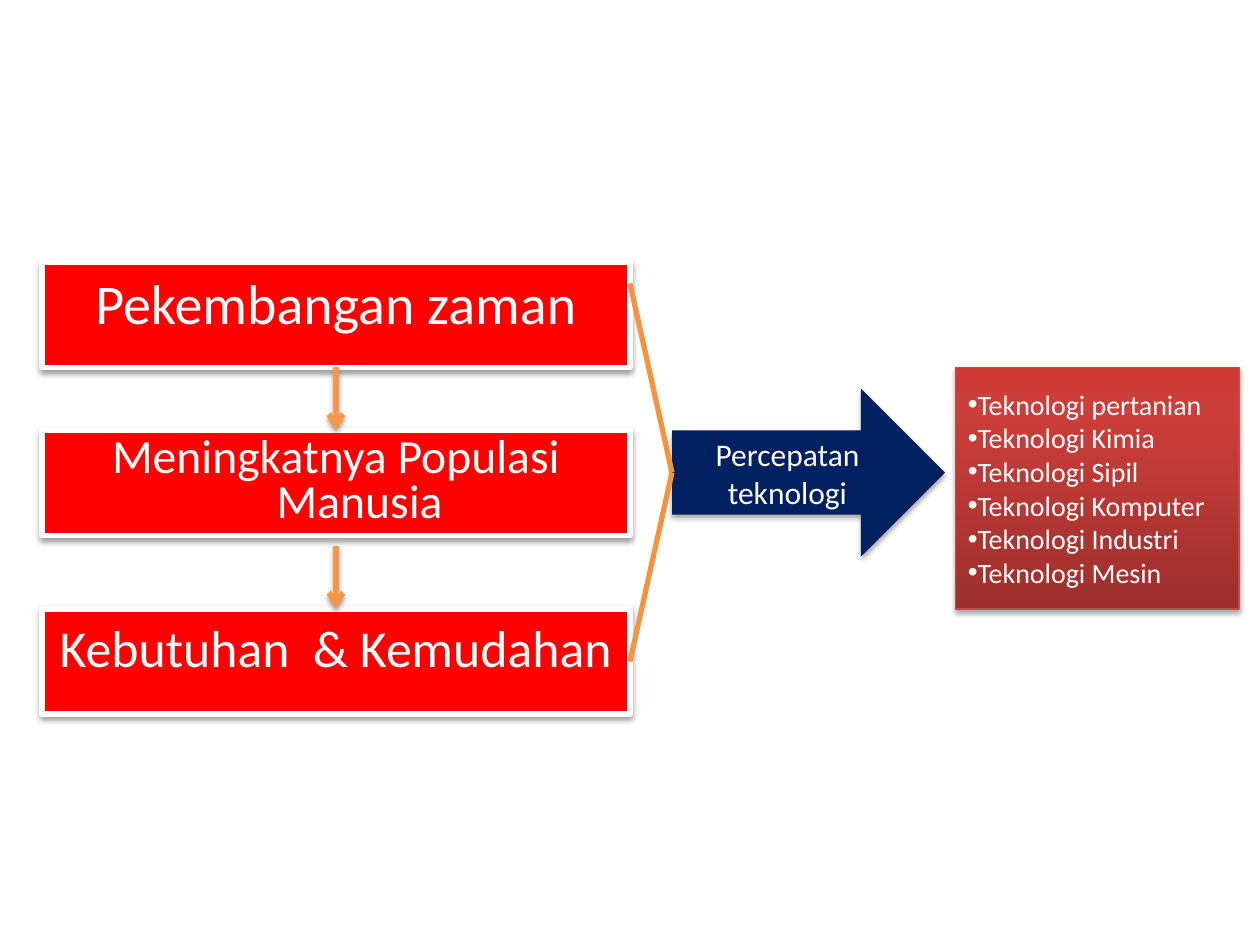
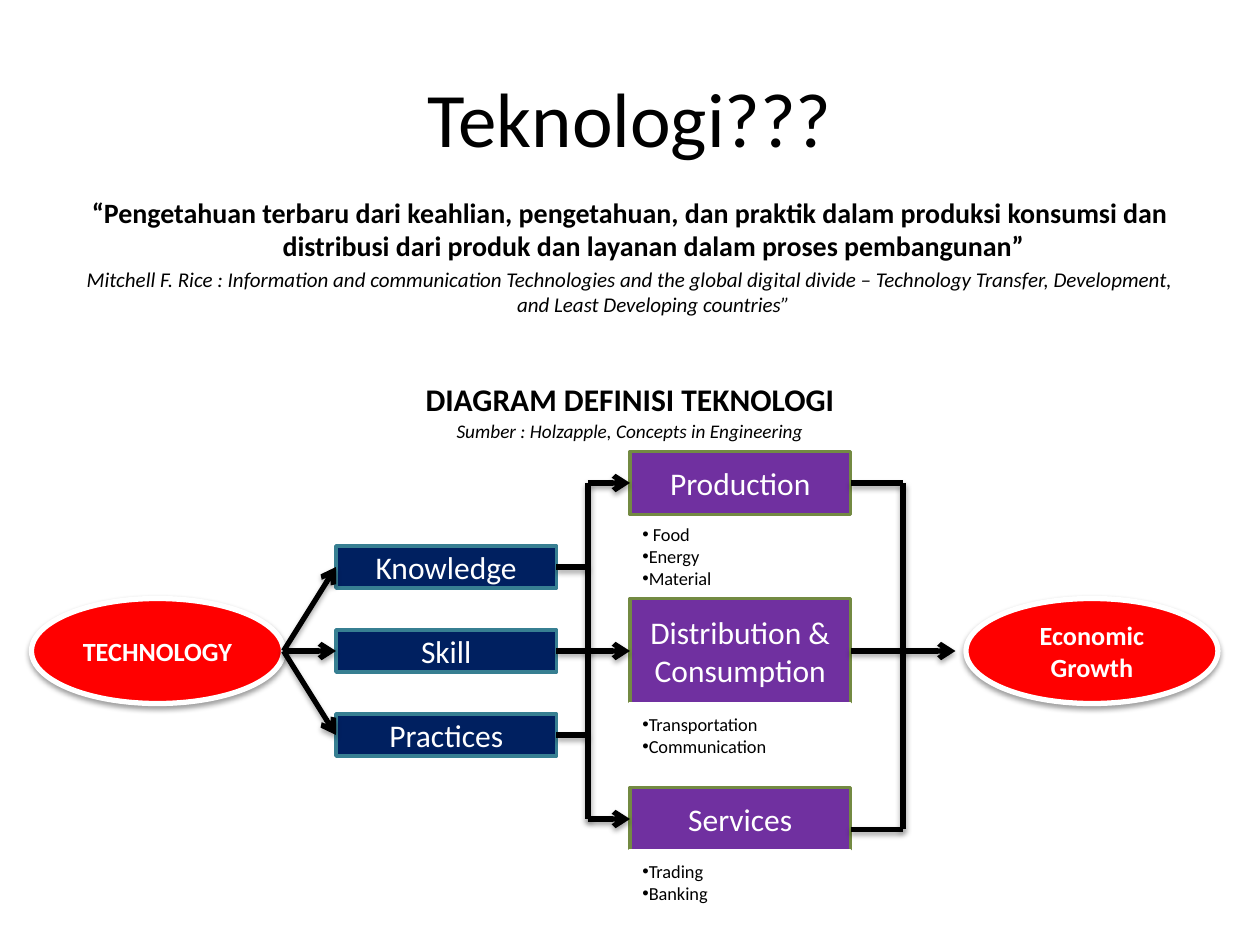
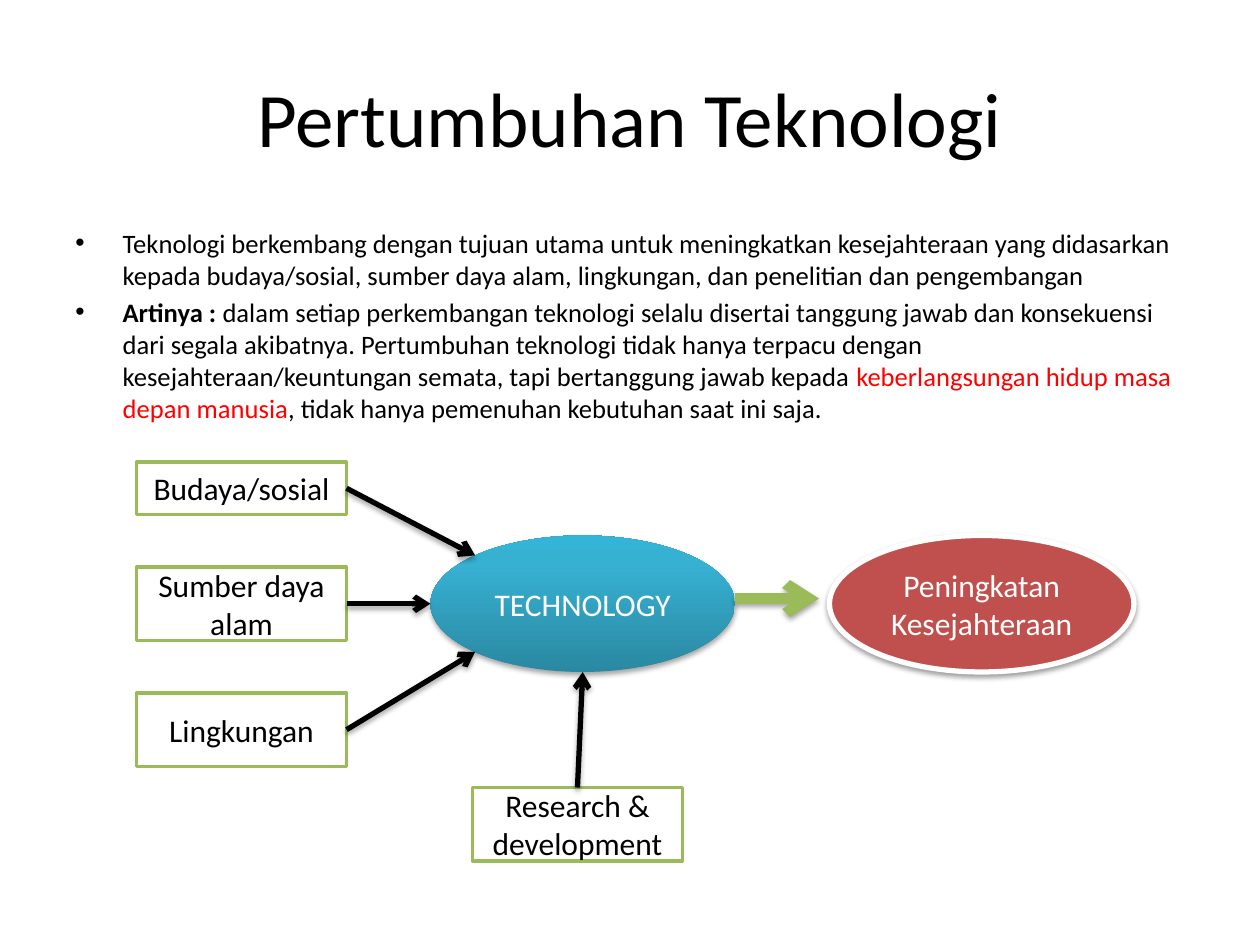
from collections import namedtuple
from copy import deepcopy
from dataclasses import dataclass
from math import sqrt

from lxml import etree
from pptx import Presentation
from pptx import util as u
from pptx.dml.color import RGBColor
from pptx.enum import shapes, text
from pptx.oxml.ns import qn

SHAPE = shapes.MSO_SHAPE
CENTER, LEFT = text.PP_ALIGN.CENTER, text.PP_ALIGN.LEFT
TOP, MIDDLE = text.MSO_ANCHOR.TOP, text.MSO_ANCHOR.MIDDLE
SIDE_TOP, SIDE_LEFT, SIDE_BOTTOM, SIDE_RIGHT = range(4)

Shadow = namedtuple("Shadow", "alpha blur dist")
Part = namedtuple("Part", "size color bold italic", defaults=(None, None, False, False))


@dataclass(frozen=True)
class Theme:
    font: str = "Calibri"
    black: str = "000000"
    white: str = "FFFFFF"
    red: str = "FF0000"
    navy: str = "002060"
    purple: str = "7030A0"
    brick: str = "C0504D"
    brick_edge: str = "BF4C48"
    green: str = "9BBB59"
    green_edge: str = "738A42"
    teal_edge: str = "377F92"
    orange: str = "F79646"
    bracket: str = "F69240"
    red_fade: tuple = ((0, "9C2F2D"), (0.8, "CB3E3A"), (1, "CE3B37"))
    teal_fade: tuple = ((0, "2A88A2"), (0.8, "37B1D2"), (1, "34B4D6"))
    title: float = 44
    label: float = 18
    listing: float = 16
    growth: float = 15.2
    oval: float = 15
    source: float = 12
    caption_source: float = 11
    small: float = 10.5
    hanging: float = 27
    soft: Shadow = Shadow(38, 3.1, 1.6)
    deep: Shadow = Shadow(35, 3.1, 1.8)


T = Theme()


class Box(namedtuple("Box", "x y w h")):
    def at(self, dx, dy, w, h):
        return Box(self.x + dx, self.y + dy, w, h)

    def point(self, dx, dy):
        return self.x + dx, self.y + dy


def pts(values):
    return [u.Pt(v) for v in values]


def rgb(value):
    return RGBColor.from_string(value)


def set_all(target, values):
    for name, value in values.items():
        setattr(target, name, value)


def add_shadow(shape, shadow):
    effects = etree.SubElement(shape._element.spPr, qn("a:effectLst"))
    if shadow:
        outer = etree.SubElement(
            effects, qn("a:outerShdw"), blurRad=str(u.Pt(shadow.blur)),
            dist=str(u.Pt(shadow.dist)), dir="5400000", rotWithShape="0")
        color = etree.SubElement(outer, qn("a:srgbClr"), val=T.black)
        etree.SubElement(color, qn("a:alpha"), val=str(shadow.alpha * 1000))


def add_bullet(p):
    pPr = p._p.get_or_add_pPr()
    etree.SubElement(pPr, qn("a:buFont"), typeface="Arial")
    etree.SubElement(pPr, qn("a:buChar"), char="•")


def write(sp, paragraphs, size=T.label, color=T.white, bold=False, align=CENTER,
          anchor=MIDDLE, hanging=False, bullet=False, spacing=None):
    tf = sp.text_frame
    set_all(tf, {"word_wrap": True, "vertical_anchor": anchor})
    for i, content in enumerate(paragraphs):
        p = tf.add_paragraph() if i else tf.paragraphs[0]
        runs = [(content, Part(bold=bold))] if isinstance(content, str) else content
        set_all(p, {"alignment": align, "line_spacing": spacing})
        if hanging:
            p.space_before = u.Pt(0.2 * (runs[0][1].size or size))
            pPr = p._p.get_or_add_pPr()
            pPr.set("marL", str(u.Pt(T.hanging)))
            pPr.set("indent", str(-u.Pt(T.hanging)))
        if bullet:
            add_bullet(p)
        for words, part in runs:
            r = p.add_run()
            r.text = words
            set_all(r.font, {"name": T.font, "size": u.Pt(part.size or size),
                             "bold": part.bold, "italic": part.italic})
            r.font.color.rgb = rgb(part.color or color)


def fade(sp, stops):
    sp.fill.gradient()
    sp.fill.gradient_angle = 90
    gs_list = sp._element.spPr.find(qn("a:gradFill")).find(qn("a:gsLst"))
    gs_list.append(deepcopy(gs_list[-1]))
    for stop, (position, color) in zip(sp.fill.gradient_stops, stops):
        stop.color.rgb = rgb(color)
        stop.position = position


def add_block(s, kind, box, fill, paragraphs, edge=None, weight=2, shadow=None, **style):
    sp = s.shapes.add_shape(kind, *pts(box))
    if isinstance(fill, str):
        sp.fill.solid()
        sp.fill.fore_color.rgb = rgb(fill)
    else:
        fade(sp, fill)
    if edge:
        sp.line.color.rgb = rgb(edge)
        sp.line.width = u.Pt(weight)
    else:
        sp.line.fill.background()
    add_shadow(sp, shadow)
    write(sp, paragraphs, **style)
    return sp


def add_text(s, box, paragraphs, **style):
    sp = s.shapes.add_textbox(*pts(box))
    write(sp, paragraphs, color=T.black, anchor=TOP, hanging=True, **style)


def add_line(s, start, end, color=T.black, weight=3, arrow=False, shadow=T.deep):
    joined = [hasattr(e[0], "shape_type") for e in (start, end)]
    places = [(0, 0) if j else e for e, j in zip((start, end), joined)]
    line = s.shapes.add_connector(
        shapes.MSO_CONNECTOR.STRAIGHT, *pts(places[0]), *pts(places[1]))
    if joined[0]:
        line.begin_connect(*start)
    if joined[1]:
        line.end_connect(*end)
    line.line.color.rgb = rgb(color)
    line.line.width = u.Pt(weight)
    if arrow:
        etree.SubElement(line.line._get_or_add_ln(), qn("a:tailEnd"), type="arrow")
    add_shadow(line, shadow)


def add_title(s, words):
    title = s.shapes.title
    set_all(title, dict(zip(("left", "top", "width", "height"), pts((36, 21.6, 648, 90)))))
    write(title, [words], size=T.title, color=T.black)


def cause_chain(s, box):
    causes = (
        (0, "Pekembangan zaman", 32, None),
        (96, "Meningkatnya Populasi Manusia", 27.2, 0.8),
        (198, "Kebutuhan  & Kemudahan", 29.6, None),
    )
    first, second, third = [
        add_block(s, SHAPE.RECTANGLE, box.at(0, dy, box.w, 60), T.red, [words], T.white, 3,
                  T.soft, size=size, spacing=spacing, anchor=TOP, hanging=True)
        for dy, words, size, spacing in causes]
    down = {"color": T.orange, "arrow": True, "shadow": T.soft}
    add_line(s, (first, SIDE_BOTTOM), (second, SIDE_TOP), **down)
    add_line(s, box.point(box.w / 2, 162), (third, SIDE_TOP), **down)


def acceleration(s, box):
    arrow = add_block(s, SHAPE.RIGHT_ARROW, box.at(24, 60, 156, 96), T.navy,
                      ["Percepatan teknologi"], shadow=T.deep)
    for dy in (0, 216):
        add_line(s, (arrow, SIDE_LEFT), box.point(0, dy), T.bracket, shadow=None)


def technology_list(s, box):
    fields = ("pertanian", "Kimia", "Sipil", "Komputer", "Industri", "Mesin")
    add_block(s, SHAPE.RECTANGLE, box, T.red_fade, [f"Teknologi {f}" for f in fields],
              T.brick_edge, 0.75, T.deep, size=T.listing, align=LEFT, bullet=True)


def definition(s, box):
    add_text(s, box.at(0, 0, box.w, 96), [
        [("“Pengetahuan terbaru dari keahlian, pengetahuan, dan praktik dalam produksi "
          "konsumsi dan distribusi dari produk dan layanan dalam proses pembangunan”",
          Part(T.listing, bold=True))],
        [("Mitchell F. Rice : Information and communication Technologies and the global "
          "digital divide – Technology Transfer, Development, and Least Developing "
          "countries”", Part(T.source, italic=True))],
    ])
    add_text(s, box.at(0, 108, box.w, 42), [
        [("DIAGRAM DEFINISI TEKNOLOGI", Part(T.label, bold=True))],
        [("Sumber : Holzapple, Concepts in Engineering",
          Part(T.caption_source, italic=True))],
    ], spacing=0.9)


def definition_diagram(s, box):
    mid, input_bus, output_bus = 114, 318, 498
    for dx, words in ((0, "TECHNOLOGY"), (534, "Economic Growth")):
        add_block(s, SHAPE.OVAL, box.at(dx, mid - 30, 144, 60), T.red, [words], T.white, 3,
                  T.soft, size=T.oval, bold=True)
    inputs = [add_block(s, SHAPE.RECTANGLE, box.at(174, 54 + 48 * i, 126, 24), T.navy,
                        [words], T.teal_edge)
              for i, words in enumerate(("Knowledge", "Skill", "Practices"))]
    outputs = (
        (0, 36, ["Production"], 42, [" Food", "Energy", "Material"]),
        (84, 60, ["Distribution &", "Consumption"], 144, ["Transportation", "Communication"]),
        (192, 36, ["Services"], 228, ["Trading", "Banking"]),
    )
    production, distribution, services = [
        add_block(s, SHAPE.RECTANGLE, box.at(342, dy, 126, h), T.purple, words, T.green_edge)
        for dy, h, words, _, _ in outputs]

    for sp in inputs:
        add_line(s, box.point(144, mid), (sp, SIDE_LEFT), arrow=True)
    knowledge, skill, practices = inputs
    add_line(s, (skill, SIDE_RIGHT), (distribution, SIDE_LEFT), arrow=True)
    for sp, dy in ((knowledge, 66), (practices, 162)):
        add_line(s, (sp, SIDE_RIGHT), box.point(input_bus, dy))
    for sp, dy in ((production, 18), (services, 210)):
        add_line(s, box.point(input_bus, dy), (sp, SIDE_LEFT), arrow=True, shadow=T.soft)
    add_line(s, box.point(input_bus, 18), box.point(input_bus, 210))
    add_line(s, box.point(output_bus, 18), box.point(output_bus, 216))
    add_line(s, (production, SIDE_RIGHT), box.point(output_bus, 18))
    add_line(s, box.point(468, 216), box.point(output_bus, 216))
    add_line(s, (distribution, SIDE_RIGHT), box.point(528, mid), arrow=True)

    for _, _, _, dy, items in outputs:
        add_block(s, SHAPE.RECTANGLE, box.at(342, dy, 126, 36), T.white, items, T.white,
                  size=T.small, color=T.black, align=LEFT, bullet=True)


def growth_text(s, box):
    add_text(s, box, [
        "Teknologi berkembang dengan tujuan utama untuk meningkatkan kesejahteraan yang "
        "didasarkan kepada budaya/sosial, sumber daya alam, lingkungan, dan penelitian dan "
        "pengembangan",
        [("Artinya : ", Part(bold=True)),
         ("dalam setiap perkembangan teknologi selalu disertai tanggung jawab dan "
          "konsekuensi dari segala akibatnya. Pertumbuhan teknologi tidak hanya terpacu "
          "dengan kesejahteraan/keuntungan semata, tapi bertanggung jawab kepada ", Part()),
         ("keberlangsungan hidup masa depan manusia", Part(color=T.red)),
         (", tidak hanya pemenuhan kebutuhan saat ini saja.", Part())],
    ], size=T.growth, align=LEFT, bullet=True)


def growth_diagram(s, box):
    factors = (
        (0, 0, 30, "Budaya/sosial"),
        (0, 60, 42, "Sumber daya alam"),
        (0, 132, 42, "Lingkungan"),
        (192, 186, 42, "Research & development"),
    )
    culture, resources, environment, research = [
        add_block(s, SHAPE.RECTANGLE, box.at(dx, dy, 120, h), T.white, [words], T.green,
                  color=T.black)
        for dx, dy, h, words in factors]
    hub = box.at(168, 42, 174, 78)
    add_block(s, SHAPE.OVAL, hub, T.teal_fade, ["TECHNOLOGY"], shadow=T.deep)
    add_block(s, SHAPE.OVAL, box.at(396, 42, 174, 78), T.brick,
              ["Peningkatan Kesejahteraan"], T.white, 3, T.soft)

    def rim(across, down):
        return hub.point(hub.w / 2 * (1 + across), hub.h / 2 * (1 + down))

    diagonal = 1 / sqrt(2)
    for start, end in (
        ((culture, SIDE_RIGHT), rim(-diagonal, -diagonal)),
        ((resources, SIDE_RIGHT), rim(-1, 0)),
        ((environment, SIDE_RIGHT), rim(-diagonal, diagonal)),
        ((research, SIDE_TOP), rim(0, 1)),
    ):
        add_line(s, start, end, arrow=True)
    add_line(s, box.point(342, 78), box.point(390, 78), T.green, 6, arrow=True)


def main():
    prs = Presentation()
    prs.slide_width, prs.slide_height = pts((720, 540))
    title_only, blank = prs.slide_layouts[5], prs.slide_layouts[6]

    s = prs.slides.add_slide(blank)
    cause_chain(s, Box(24, 150, 336, 258))
    acceleration(s, Box(360, 162, 180, 216))
    technology_list(s, Box(546, 210, 162, 138))

    s = prs.slides.add_slide(title_only)
    add_title(s, "Teknologi???")
    definition(s, Box(36, 108, 648, 150))
    definition_diagram(s, Box(18, 258, 678, 264))

    s = prs.slides.add_slide(title_only)
    add_title(s, "Pertumbuhan Teknologi")
    growth_text(s, Box(36, 126, 648, 108))
    growth_diagram(s, Box(78, 264, 570, 228))

    prs.save("out.pptx")


if __name__ == "__main__":
    main()
